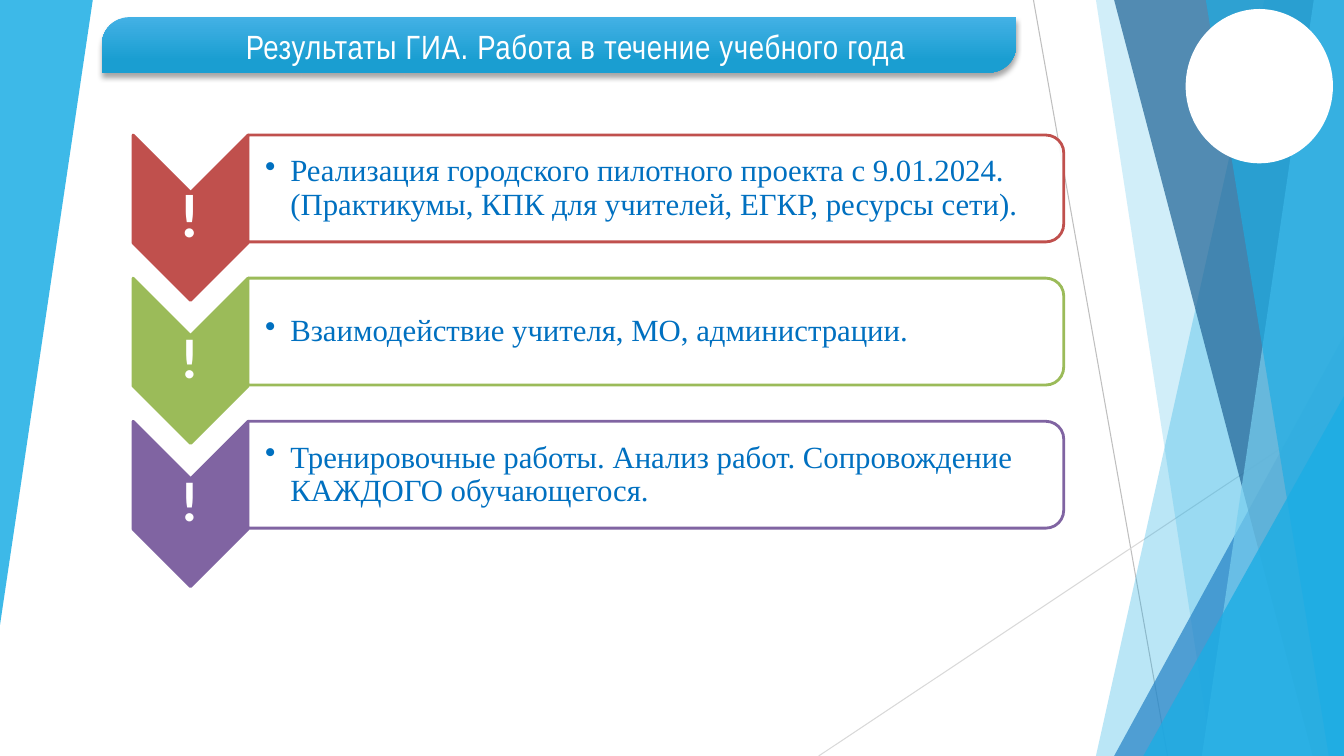
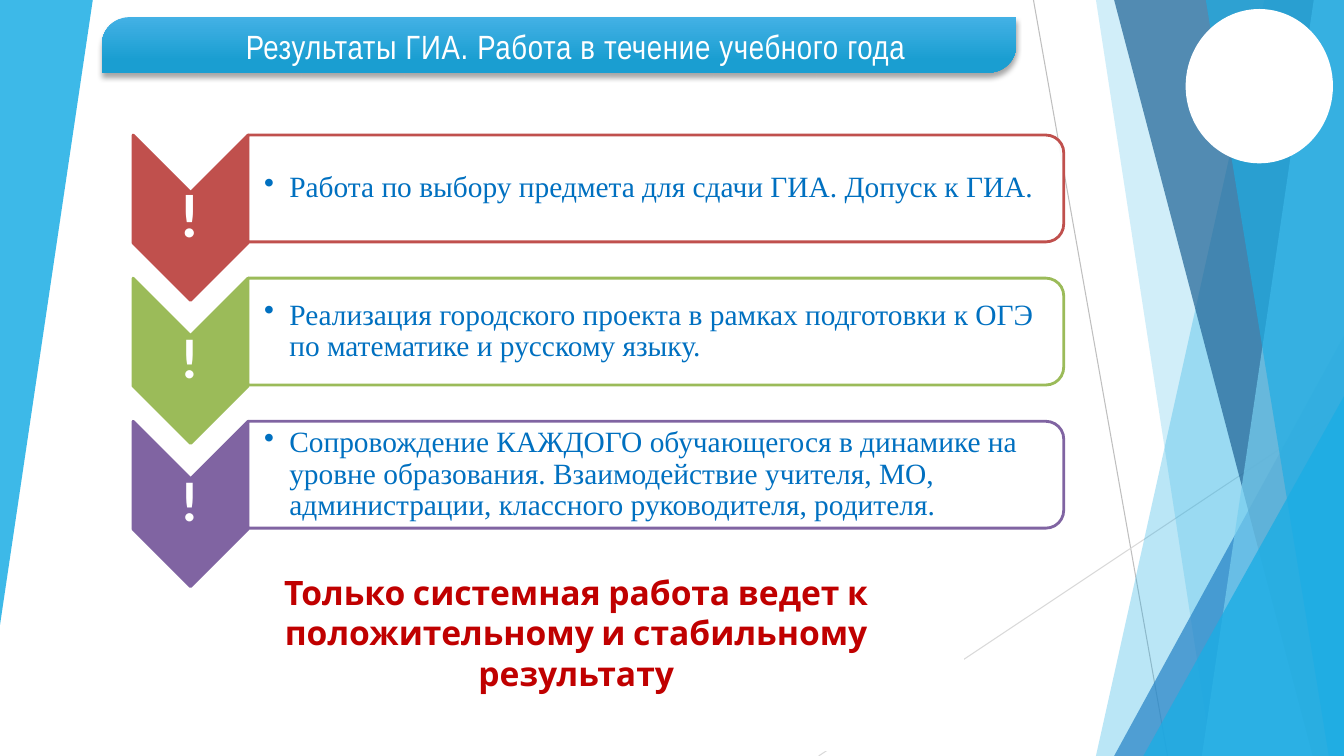
from lxml import etree
from pptx import Presentation
from pptx.dml.color import RGBColor
from pptx.enum.shapes import MSO_CONNECTOR, MSO_SHAPE
from pptx.enum.text import MSO_ANCHOR, PP_ALIGN
from pptx.oxml.ns import qn
from pptx.util import Pt

LINE = MSO_CONNECTOR.STRAIGHT
TRI, OVAL, RECT = MSO_SHAPE.ISOSCELES_TRIANGLE, MSO_SHAPE.OVAL, MSO_SHAPE.RECTANGLE
ARROW, BAR = MSO_SHAPE.CHEVRON, MSO_SHAPE.ROUND_2_SAME_RECTANGLE
BANNER = MSO_SHAPE.ROUND_2_DIAG_RECTANGLE
TOP, MIDDLE = MSO_ANCHOR.TOP, MSO_ANCHOR.MIDDLE
LEFT, CENTER = PP_ALIGN.LEFT, PP_ALIGN.CENTER

PX = 9144  # 100 px to the inch
WIDE, HIGH = 1333, 750
WHITE, BLUE, RED = "FFFFFF", "0070C0", "C00000"
SKY = "1CADE4"

TITLE = "Результаты ГИА. Работа в течение учебного года"
SLIDES = [
    {"size": 22, "inset": (17, 2, 2, 2), "items": [
        "Реализация городского пилотного проекта с 9.01.2024. "
        "(Практикумы, КПК для учителей, ЕГКР, ресурсы сети).",
        "Взаимодействие учителя, МО, администрации.",
        "Тренировочные работы. Анализ работ. Сопровождение КАЖДОГО обучающегося.",
    ]},
    {"size": 21, "inset": (16, 1, 1, 1), "items": [
        "Работа по выбору предмета для сдачи ГИА. Допуск к ГИА.",
        "Реализация городского проекта в рамках подготовки к ОГЭ "
        "по математике и русскому языку.",
        "Сопровождение КАЖДОГО обучающегося в динамике на уровне образования. "
        "Взаимодействие учителя, МО, администрации, классного руководителя, родителя.",
    ], "moral": "Только системная работа ведет к положительному и стабильному результату"},
]
ROWS = [("C0504D", 44), ("9BBB59", 40), ("8064A2", 40)]  # colour, mark size
ROW_TOP, PITCH = 134, 142

RAYS = [((1025, 0, 1158, 750), "BFBFBF"), ((1333, 403, 812, 750), "D9D9D9")]
# Place, colour, opacity; a pair is the top and foot of a band's left edge,
# a box holds a right-angled triangle.
PANES = [
    ((1254, 1087), SKY, 30),
    ((1087, 1202), SKY, 20),
    ((1105, 333, 228, 417), "2683C6", 72),
    ((1105, 1302), "1D6294", 70),
    ((1303, 1192), "77CEEF", 70),
    ((1196, 1318), SKY, 65),
    ((1134, 393, 199, 357), SKY, 80),
]


def px(*nums):
    return [round(n * PX) for n in nums]


def rgb(code):
    return RGBColor.from_string(code)


def sub(node, tag, **attrs):
    return etree.SubElement(node, qn(tag), attrs)


def paint(shape, fill, alpha=100, line=None, width=2):
    shape.shadow.inherit = False
    shape.fill.solid()
    shape.fill.fore_color.rgb = rgb(fill)
    if alpha < 100:
        tint = shape._element.spPr.find(qn("a:solidFill"))[0]
        sub(tint, "a:alpha", val=str(alpha * 1000))
    if line:
        shape.line.color.rgb = rgb(line)
        shape.line.width = Pt(width)
    else:
        shape.line.fill.background()


def block(slide, kind, box, *style):
    shape = slide.shapes.add_shape(kind, *px(*box))
    paint(shape, *style)
    return shape


def turned(slide, kind, box, *style):
    """Fill the box with a shape turned a quarter clockwise."""
    x, y, w, h = box
    shift = (w - h) / 2
    block(slide, kind, (x + shift, y - shift, h, w), *style).rotation = 90


def write(shape, text, size, font, color, bold=False, align=CENTER,
          anchor=MIDDLE, inset=(10, 5, 10, 5)):
    frame = shape.text_frame
    frame.word_wrap = True
    frame.vertical_anchor = anchor
    (frame.margin_left, frame.margin_top,
     frame.margin_right, frame.margin_bottom) = px(*inset)
    frame.text = text
    para = frame.paragraphs[0]
    para.alignment = align
    face = para.runs[0].font
    face.size, face.name, face.bold = Pt(size), font, bold
    face.color.rgb = rgb(color)
    return para


def label(slide, box, *args, **opts):
    return write(slide.shapes.add_textbox(*px(*box)), *args, **opts)


def pane(slide, place, color, alpha):
    if len(place) == 4:
        shape = block(slide, TRI, place, color, alpha)
        shape.adjustments[0] = 1
        return shape
    top, foot = place
    path = slide.shapes.build_freeform(top, 0, PX)
    path.add_line_segments([(WIDE, 0), (WIDE, HIGH), (foot, HIGH)])
    shape = path.convert_to_shape()
    paint(shape, color, alpha)
    return shape


def decor(slide):
    for ends, color in RAYS:
        ray = slide.shapes.add_connector(LINE, *px(*ends))
        ray.line.color.rgb = rgb(color)
        ray.line.width = Pt(0.75)
        sub(ray._element.spPr, "a:effectLst")
    for place, color, alpha in PANES:
        pane(slide, place, color, alpha)
    pane(slide, (0, 0, 92, 620), SKY, 85).rotation = 180
    block(slide, OVAL, (1177, 10, 144, 151), WHITE, 100, WHITE, 1.5)


def header(slide):
    bar = block(slide, BANNER, (101, 17, 907, 55), SKY)
    bar.adjustments[0] = 0.5
    bar.fill.gradient()
    bar.fill.gradient_angle = 270
    for stop, spot, color in zip(bar.fill.gradient_stops, (0, 0.78), ("43B1E5", "1A9ED1")):
        stop.position = spot
        stop.color.rgb = rgb(color)
    glow = sub(bar._element.spPr.find(qn("a:effectLst")), "a:outerShdw",
               blurRad=str(Pt(4)), dist=str(Pt(3)), dir="5400000", rotWithShape="0")
    sub(sub(glow, "a:srgbClr", val="000000"), "a:alpha", val="35000")
    para = label(slide, (150, 21, 842, 50), TITLE, 24, "Arial Narrow", WHITE, anchor=TOP)
    para.runs[0]._r.get_or_add_rPr().set("spc", "50")


def row(slide, top, color, mark, text, size, inset):
    turned(slide, ARROW, (132, top, 114, 164), color, 100, color)
    sign = label(slide, (131, top + 57, 114, 49), "!", mark, "Calibri", WHITE,
                 bold=True, inset=(3, 3, 3, 3))
    turned(slide, BAR, (246, top, 809, 106), WHITE, 90, color)
    para = label(slide, (246, top + 5, 804, 96), text, size, "Times New Roman", BLUE,
                 align=LEFT, inset=inset)
    props = para._p.get_or_add_pPr()
    props.set("marL", str(25 * PX))
    props.set("indent", str(-25 * PX))
    sub(props, "a:buChar", char="•")
    sign.line_spacing = para.line_spacing = 0.9


def main():
    deck = Presentation()
    deck.slide_width, deck.slide_height = px(WIDE, HIGH)
    for page in SLIDES:
        slide = deck.slides.add_slide(deck.slide_layouts[6])
        decor(slide)
        header(slide)
        if "moral" in page:
            panel = block(slide, RECT, (187, 510, 769, 235), WHITE)
            write(panel, page["moral"], 24, "Cabin", RED, bold=True)
        for i, ((color, mark), text) in enumerate(zip(ROWS, page["items"])):
            row(slide, ROW_TOP + i * PITCH, color, mark, text, page["size"], page["inset"])
    deck.save("out.pptx")


if __name__ == "__main__":
    main()
